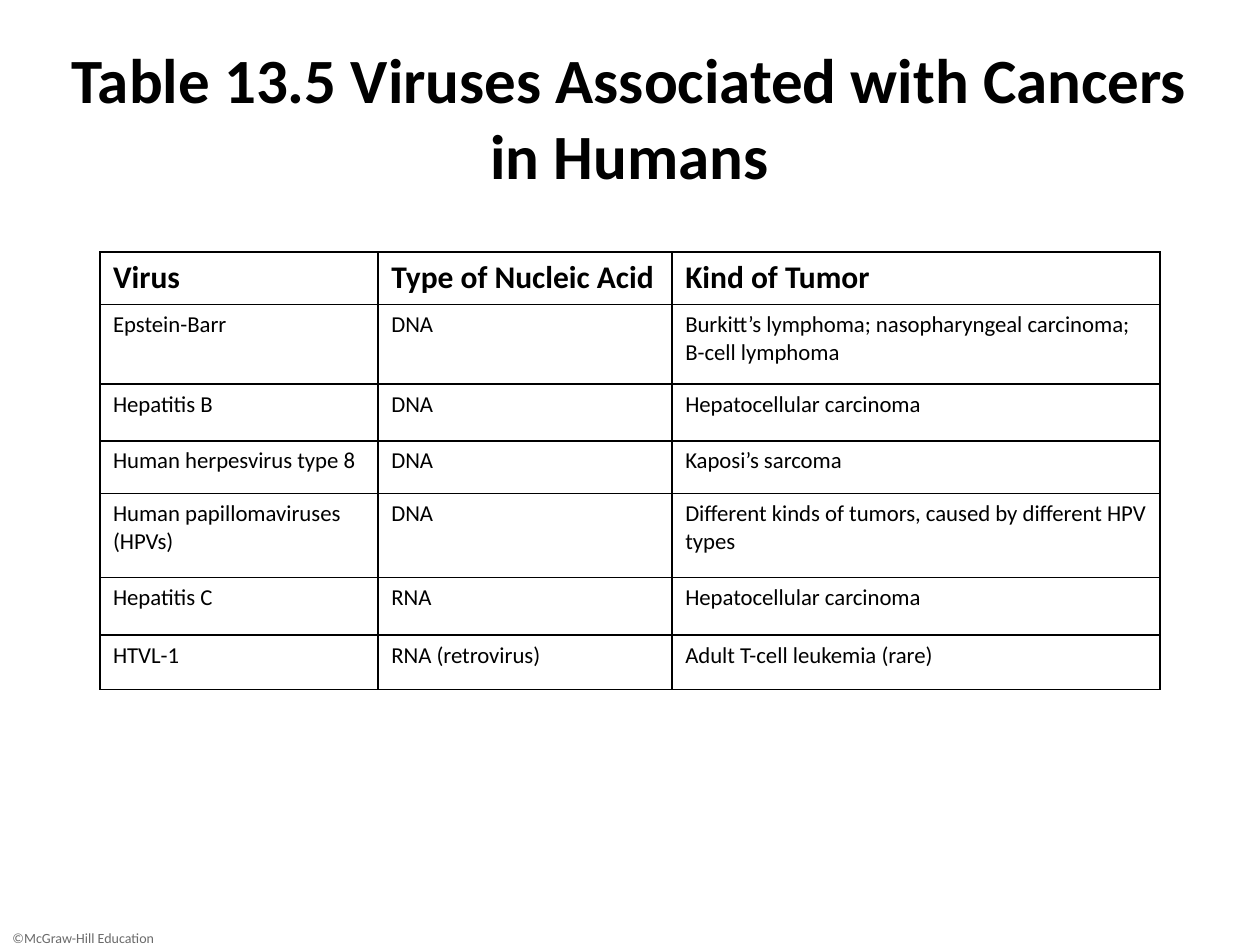
from dataclasses import dataclass

from lxml.etree import SubElement
from pptx import Presentation
from pptx.dml.color import RGBColor
from pptx.enum.text import MSO_ANCHOR as Anchor, PP_ALIGN as Align
from pptx.oxml.ns import qn
from pptx.util import Pt


@dataclass(frozen=True)
class Theme:
    font: str = "Calibri"
    ink: str = "000000"
    muted: str = "6A6A6A"
    paper: str = "FFFFFF"
    title_size: float = 36
    header_size: float = 18
    body_size: float = 13
    footer_size: float = 8
    border: float = 1


THEME = Theme()


def write(frame, text, size=THEME.body_size, color=THEME.ink, bold=False, align=Align.LEFT):
    """Put one formatted paragraph into a text frame."""
    frame.word_wrap = True
    paragraph = frame.paragraphs[0]
    paragraph.alignment = align
    run = paragraph.add_run()
    run.text = text
    font = run.font
    font.name, font.size, font.bold = THEME.font, Pt(size), bold
    font.color.rgb = RGBColor.from_string(color)


class SlideBuilder:
    def __init__(self, slide, theme):
        self.slide = slide
        self.theme = theme
        background = slide.background.fill
        background.solid()
        background.fore_color.rgb = RGBColor.from_string(theme.paper)

    def text(self, text, left, top, width, height, inset_top=3.6, **style):
        box = self.slide.shapes.add_textbox(Pt(left), Pt(top), Pt(width), Pt(height))
        frame = box.text_frame
        frame.vertical_anchor = Anchor.TOP
        frame.margin_top = Pt(inset_top)
        write(frame, text, **style)

    def table(self, rows, left, top, widths, heights):
        table = self.slide.shapes.add_table(
            len(rows), len(widths), Pt(left), Pt(top), Pt(sum(widths)), Pt(sum(heights))
        ).table
        table.first_row = table.horz_banding = False
        for column, width in zip(table.columns, widths):
            column.width = Pt(width)
        for row, height in zip(table.rows, heights):
            row.height = Pt(height)
        for r, values in enumerate(rows):
            size = self.theme.body_size if r else self.theme.header_size
            for c, value in enumerate(values):
                cell = table.cell(r, c)
                cell.margin_left = cell.margin_right = Pt(7.6)
                cell.margin_top = cell.margin_bottom = Pt(3.6)
                cell.vertical_anchor = Anchor.TOP
                write(cell.text_frame, value, size=size, bold=r == 0)
                self.borders(cell)
                cell.fill.background()

    def borders(self, cell):
        properties = cell._tc.get_or_add_tcPr()
        for side in ("a:lnL", "a:lnR", "a:lnT", "a:lnB"):
            line = SubElement(properties, qn(side), w=str(Pt(self.theme.border)))
            fill = SubElement(line, qn("a:solidFill"))
            SubElement(fill, qn("a:srgbClr"), val=self.theme.ink)


VIRUSES = [
    ("Virus", "Type of Nucleic Acid", "Kind of Tumor"),
    ("Epstein-Barr", "DNA", "Burkitt’s lymphoma; nasopharyngeal carcinoma; B-cell lymphoma"),
    ("Hepatitis B", "DNA", "Hepatocellular carcinoma"),
    ("Human herpesvirus type 8", "DNA", "Kaposi’s sarcoma"),
    ("Human papillomaviruses (HPVs)", "DNA",
     "Different kinds of tumors, caused by different HPV types"),
    ("Hepatitis C", "RNA", "Hepatocellular carcinoma"),
    ("HTVL-1", "RNA (retrovirus)", "Adult T-cell leukemia (rare)"),
]


def main():
    deck = Presentation()
    deck.slide_width, deck.slide_height = Pt(720), Pt(540)
    builder = SlideBuilder(deck.slides.add_slide(deck.slide_layouts[6]), THEME)

    # Copyright line
    builder.text("©McGraw-Hill Education", 0, 527.8, 108, 12.2,
                 size=THEME.footer_size, color=THEME.muted)

    # Title
    builder.text("Table 13.5 Viruses Associated with Cancers in Humans",
                 32.4, 17.3, 654.5, 85, inset_top=6,
                 size=THEME.title_size, bold=True, align=Align.CENTER)

    # Table of viruses
    builder.table(VIRUSES, 57, 144, widths=(159, 168, 279),
                  heights=(30, 45.5, 32.5, 30, 48, 33, 31))

    deck.save("out.pptx")


if __name__ == "__main__":
    main()
